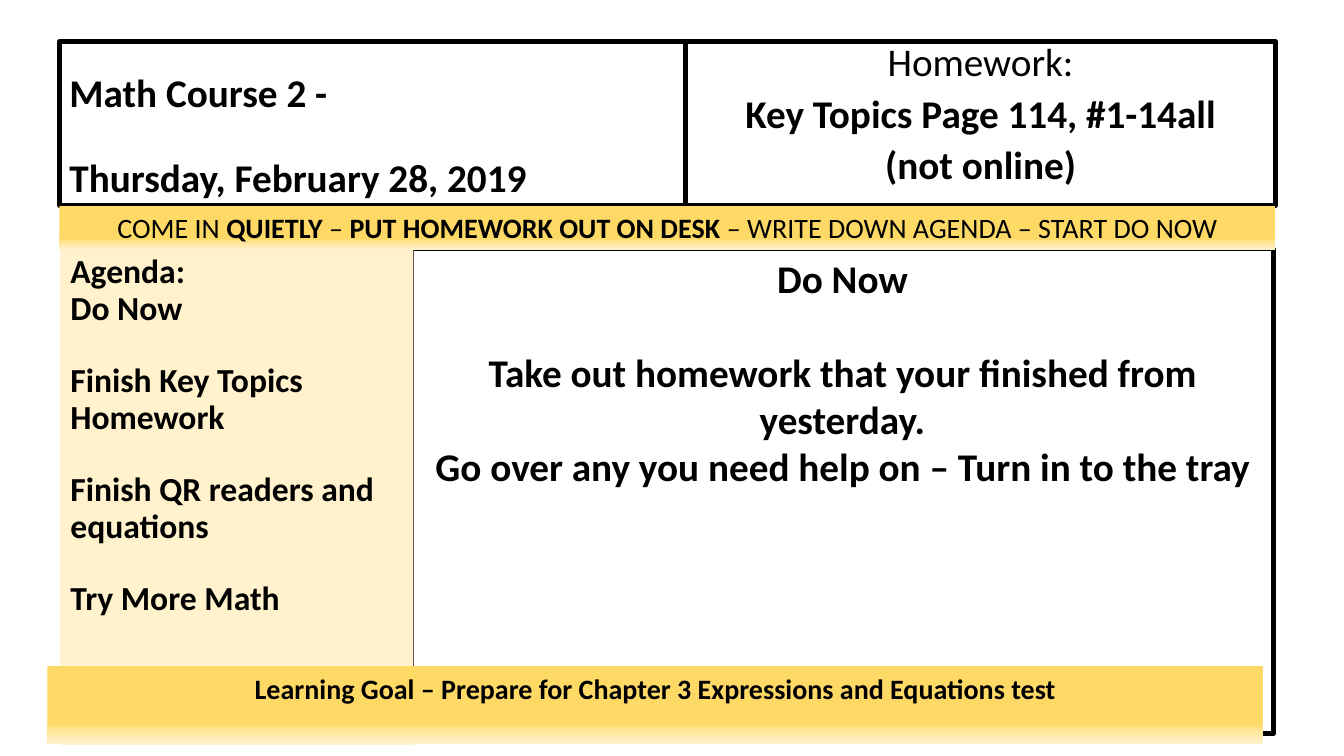
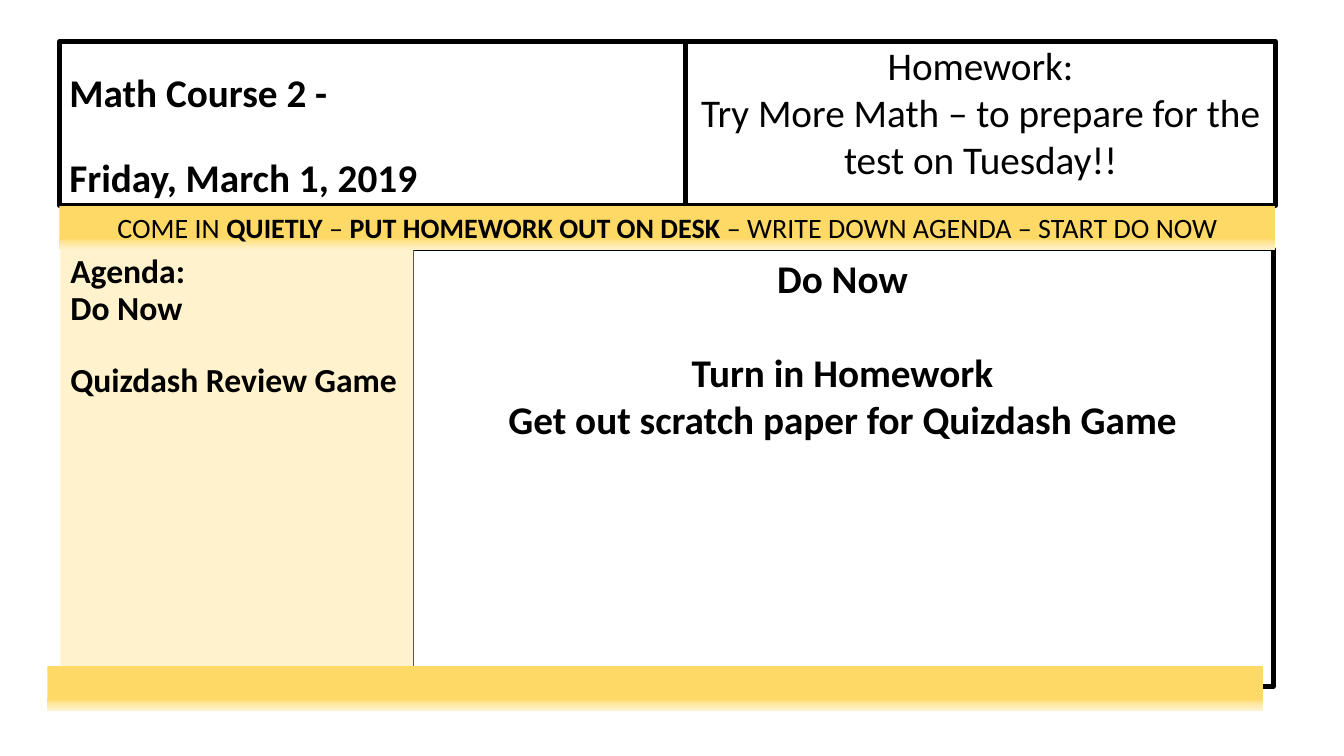
import pptx
import pptx.dml.color
import pptx.enum.shapes
import pptx.enum.text
import pptx.oxml
import pptx.oxml.ns
import pptx.util
from pptx.util import Inches

FONT = "Calibri"
INK, CREAM = "000000", "FFF2CC"
BAND_STOPS = [(0, "FFD966"), (74, "FFD966"), (83, "FFE699"), (100, CREAM)]
LEFT = pptx.enum.text.PP_ALIGN.LEFT
CENTER = pptx.enum.text.PP_ALIGN.CENTER
TOP = pptx.enum.text.MSO_ANCHOR.TOP
BOTTOM = pptx.enum.text.MSO_ANCHOR.BOTTOM

HEADER_BOX = (0.59, 0.41, 12.06, 1.63)
TITLE_WIDTH = 6.21
REMINDER_BOX = (0.59, 2.04, 12.06, 0.44)
AGENDA_AT = (0.6, 2.48, 3.5)
DO_NOW_AT = (4.08, 2.47, 8.55)
GOAL_AT = (0.47, 6.61, 12.06)

REMINDER = [("COME IN ", False), ("QUIETLY", True), (" – ", False),
            ("PUT HOMEWORK OUT ON DESK", True),
            (" – WRITE DOWN AGENDA – START DO NOW", False)]

DAYS = [
    {
        "date": "Thursday, February 28, 2019",
        "homework": [("Homework:", False, 0.8, 10),
                     ("Key Topics Page 114, #1-14all", True, 0.8, 10),
                     ("(not online)", True, 0.8, 10)],
        "agenda": ["Finish Key Topics Homework",
                   "Finish QR readers and equations", "Try More Math"],
        "do_now": ["Take out homework that your finished from yesterday.",
                   "Go over any you need help on – Turn in to the tray"],
        "goal": "Learning Goal – Prepare for Chapter 3 Expressions and Equations test",
        "heights": (4.91, 4.81, 0.77),
    },
    {
        "date": "Friday, March 1, 2019",
        "homework": [("Homework:", False, 0.9, 10),
                     ("Try More Math – to prepare for the test on Tuesday!!", False, 1, 0)],
        "agenda": ["Quizdash Review Game"],
        "do_now": ["Turn in Homework",
                   "Get out scratch paper for Quizdash Game"],
        "goal": "",
        "heights": (4.24, 4.34, 0.44),
    },
]


def color(hex_value):
    return pptx.dml.color.RGBColor.from_string(hex_value)


def panel(slide, box, fill=None, outlined=False, anchor=TOP):
    shape = slide.shapes.add_shape(
        pptx.enum.shapes.MSO_SHAPE.RECTANGLE, *(Inches(length) for length in box))
    shape.shadow.inherit = False
    if fill:
        shape.fill.solid()
        shape.fill.fore_color.rgb = color(fill)
    else:
        shape.fill.background()
    if outlined:
        shape.line.color.rgb = color(INK)
        shape.line.width = pptx.util.Pt(3.25)
    else:
        shape.line.fill.background()
    shape.text_frame.word_wrap = True
    shape.text_frame.vertical_anchor = anchor
    return shape


def band(slide, box):
    shape = panel(slide, box, CREAM)
    stops = "".join(
        f'<a:gs pos="{percent * 1000}"><a:srgbClr val="{tint}"/></a:gs>'
        for percent, tint in BAND_STOPS)
    gradient = pptx.oxml.parse_xml(
        f'<a:gradFill {pptx.oxml.ns.nsdecls("a")} rotWithShape="1">'
        f'<a:gsLst>{stops}</a:gsLst><a:lin ang="5400000" scaled="0"/></a:gradFill>')
    solid = shape.element.spPr.find(pptx.oxml.ns.qn("a:solidFill"))
    solid.getparent().replace(solid, gradient)
    return shape


def write(shape, lines, size, align):
    frame = shape.text_frame
    for index, (text, bold, spacing, before) in enumerate(lines):
        paragraph = frame.add_paragraph() if index else frame.paragraphs[0]
        paragraph.text = text
        paragraph.alignment = align
        paragraph.line_spacing = spacing
        paragraph.space_before = pptx.util.Pt(before)
        paragraph.font.name = FONT
        paragraph.font.size = pptx.util.Pt(size)
        paragraph.font.bold = bold
        paragraph.font.color.rgb = color(INK)


def add_header(slide, box, date, homework):
    left, top, width, height = box
    title = panel(slide, (left, top, TITLE_WIDTH, height), outlined=True, anchor=BOTTOM)
    write(title, [("Math Course 2 -", True, 0.9, 0), (date, True, 0.9, 30)], 28, LEFT)
    assignment = panel(
        slide, (left + TITLE_WIDTH, top, width - TITLE_WIDTH, height), outlined=True)
    write(assignment, homework, 28, CENTER)


def add_do_now(slide, box, tasks):
    lines = [("Do Now", True, 1, 0)]
    lines += [(task, True, 1, 0 if index else 34) for index, task in enumerate(tasks)]
    write(panel(slide, box, outlined=True), lines, 28, CENTER)


def add_reminder(slide, box):
    reminder = band(slide, box)
    write(reminder, [("", False, 1, 0)], 20, CENTER)
    for text, bold in REMINDER:
        run = reminder.text_frame.paragraphs[0].add_run()
        run.text = text
        run.font.bold = bold


def add_agenda(slide, box, items):
    lines = [("Agenda:", True, 0.9, 0), ("Do Now", True, 0.9, 0)]
    lines += [(item, True, 0.9, 26) for item in items]
    write(panel(slide, box, CREAM), lines, 24, LEFT)


def add_goal(slide, box, goal):
    strip = band(slide, box)
    if goal:
        write(strip, [(goal, True, 1, 0)], 20, CENTER)


def add_day(deck, day):
    slide = deck.slides.add_slide(deck.slide_layouts[6])
    agenda_height, do_now_height, goal_height = day["heights"]
    add_header(slide, HEADER_BOX, day["date"], day["homework"])
    add_do_now(slide, (*DO_NOW_AT, do_now_height), day["do_now"])
    add_reminder(slide, REMINDER_BOX)
    add_agenda(slide, (*AGENDA_AT, agenda_height), day["agenda"])
    add_goal(slide, (*GOAL_AT, goal_height), day["goal"])


def main():
    deck = pptx.Presentation()
    deck.slide_width = Inches(13.33)
    deck.slide_height = Inches(7.5)
    for day in DAYS:
        add_day(deck, day)
    deck.save("out.pptx")


if __name__ == "__main__":
    main()
